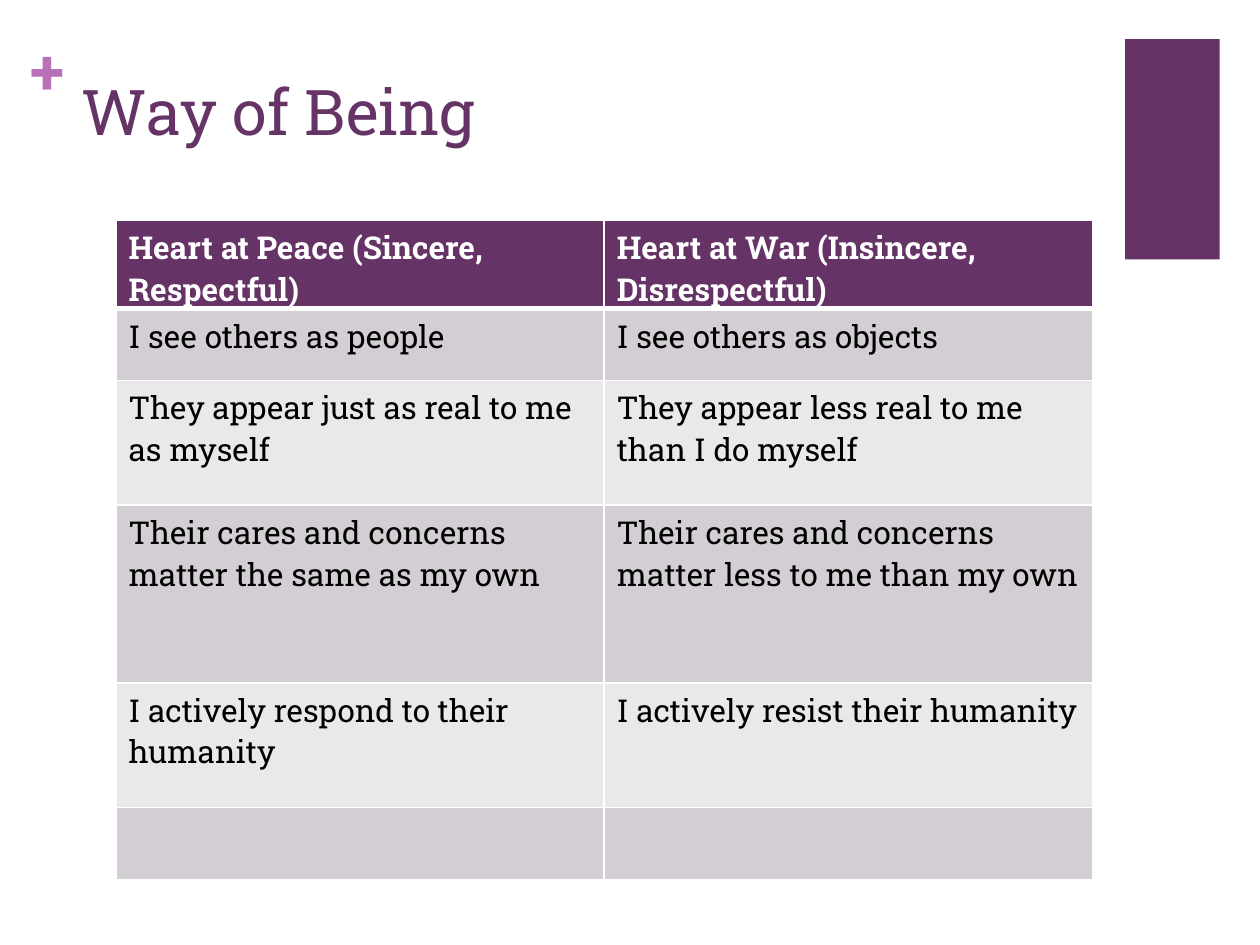
from lxml import etree
from pptx import Presentation
from pptx.dml.color import RGBColor
from pptx.enum.shapes import MSO_SHAPE
from pptx.enum.text import MSO_ANCHOR
from pptx.oxml.ns import qn
from pptx.util import Inches, Pt

RECTANGLE = MSO_SHAPE.RECTANGLE
TOP = MSO_ANCHOR.TOP
FONT = "Roboto Slab"
COLORS = {
    "purple": "663366",
    "orchid": "B870B8",
    "white": "FFFFFF",
    "black": "000000",
    "dark_band": "D3CED3",
    "light_band": "EAE8EA",
}

TITLE = "Way of Being"
ROWS = [
    ("Heart at Peace (Sincere, Respectful)", "Heart at War (Insincere, Disrespectful)"),
    ("I see others as people", "I see others as objects"),
    ("They appear just as real to me as myself", "They appear less real to me than I do myself"),
    ("Their cares and concerns matter the same as my own",
     "Their cares and concerns matter less to me than my own"),
    ("I actively respond to their humanity", "I actively resist their humanity"),
    ("", ""),
]
ROW_HEIGHTS = [0.57, 0.57, 0.99, 1.41, 0.99, 0.57]
TABLE_LEFT, TABLE_TOP, TABLE_WIDTH = 0.92, 1.75, 7.75


def color(name):
    return RGBColor.from_string(COLORS[name])


def style_text(text_frame, size, color_name, bold=False):
    for paragraph in text_frame.paragraphs:
        for run in paragraph.runs:
            run.font.name = FONT
            run.font.size = Pt(size)
            run.font.bold = bold
            run.font.color.rgb = color(color_name)


def set_borders(cell, widths):
    properties = cell._tc.get_or_add_tcPr()
    for side, width in widths.items():
        line = etree.SubElement(properties, qn(f"a:ln{side}"), w=str(Pt(width)))
        fill = etree.SubElement(line, qn("a:solidFill"))
        etree.SubElement(fill, qn("a:srgbClr"), val=COLORS["white"])


def add_accent_block(slide):
    block = slide.shapes.add_shape(RECTANGLE, Inches(8.93), Inches(0.31), Inches(0.75), Inches(1.75))
    block.shadow.inherit = False
    block.fill.solid()
    block.fill.fore_color.rgb = color("purple")
    block.line.fill.background()


def add_plus_sign(slide):
    plus = slide.shapes.add_textbox(Inches(0.24), Inches(0.25), Inches(0.29), Inches(0.61))
    text_frame = plus.text_frame
    text_frame.margin_left = text_frame.margin_right = 0
    text_frame.margin_top = text_frame.margin_bottom = 0
    text_frame.text = "+"
    style_text(text_frame, 36, "orchid", bold=True)


def add_title(slide):
    title = slide.shapes.title
    title.left, title.top = Inches(0.55), Inches(0.53)
    title.width, title.height = Inches(8.26), Inches(1.22)
    text_frame = title.text_frame
    text_frame.word_wrap = True
    text_frame.vertical_anchor = TOP
    text_frame.text = TITLE
    style_text(text_frame, 36, "purple")


def add_comparison_table(slide):
    table = slide.shapes.add_table(
        len(ROWS), len(ROWS[0]), Inches(TABLE_LEFT), Inches(TABLE_TOP),
        Inches(TABLE_WIDTH), Inches(sum(ROW_HEIGHTS))).table
    for row_index, (texts, height) in enumerate(zip(ROWS, ROW_HEIGHTS)):
        table.rows[row_index].height = Inches(height)
        is_header = row_index == 0
        band = "purple" if is_header else "dark_band" if row_index % 2 else "light_band"
        widths = {"L": 1, "R": 1, "T": 3 if row_index == 1 else 1, "B": 3 if is_header else 1}
        for column_index, text in enumerate(texts):
            cell = table.cell(row_index, column_index)
            set_borders(cell, widths)
            cell.fill.solid()
            cell.fill.fore_color.rgb = color(band)
            if text:
                cell.text_frame.text = text
                style_text(cell.text_frame, 18, "white" if is_header else "black", is_header)


def add_title_box(slide):
    title = slide.shapes.add_textbox(Inches(0.55), Inches(0.53), Inches(8.26), Inches(1.22))
    text_frame = title.text_frame
    text_frame.word_wrap = True
    text_frame.vertical_anchor = TOP
    text_frame.text = TITLE
    style_text(text_frame, 36, "purple")


def main():
    presentation = Presentation()
    presentation.slide_width = Inches(10)
    presentation.slide_height = Inches(7.5)
    slide = presentation.slides.add_slide(presentation.slide_layouts[6])
    add_accent_block(slide)
    add_plus_sign(slide)
    add_title_box(slide)
    add_comparison_table(slide)
    presentation.save("out.pptx")


if __name__ == "__main__":
    main()
